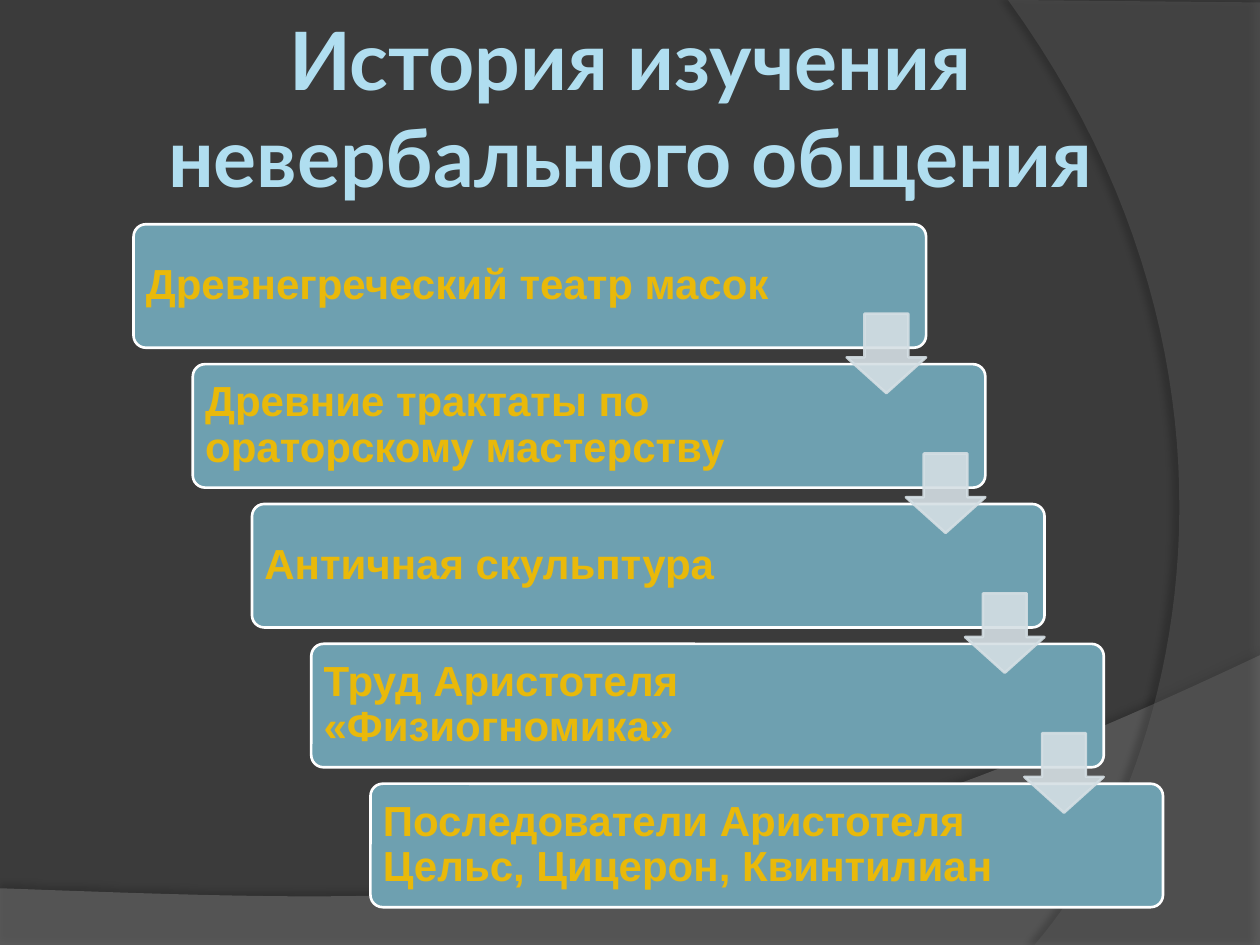
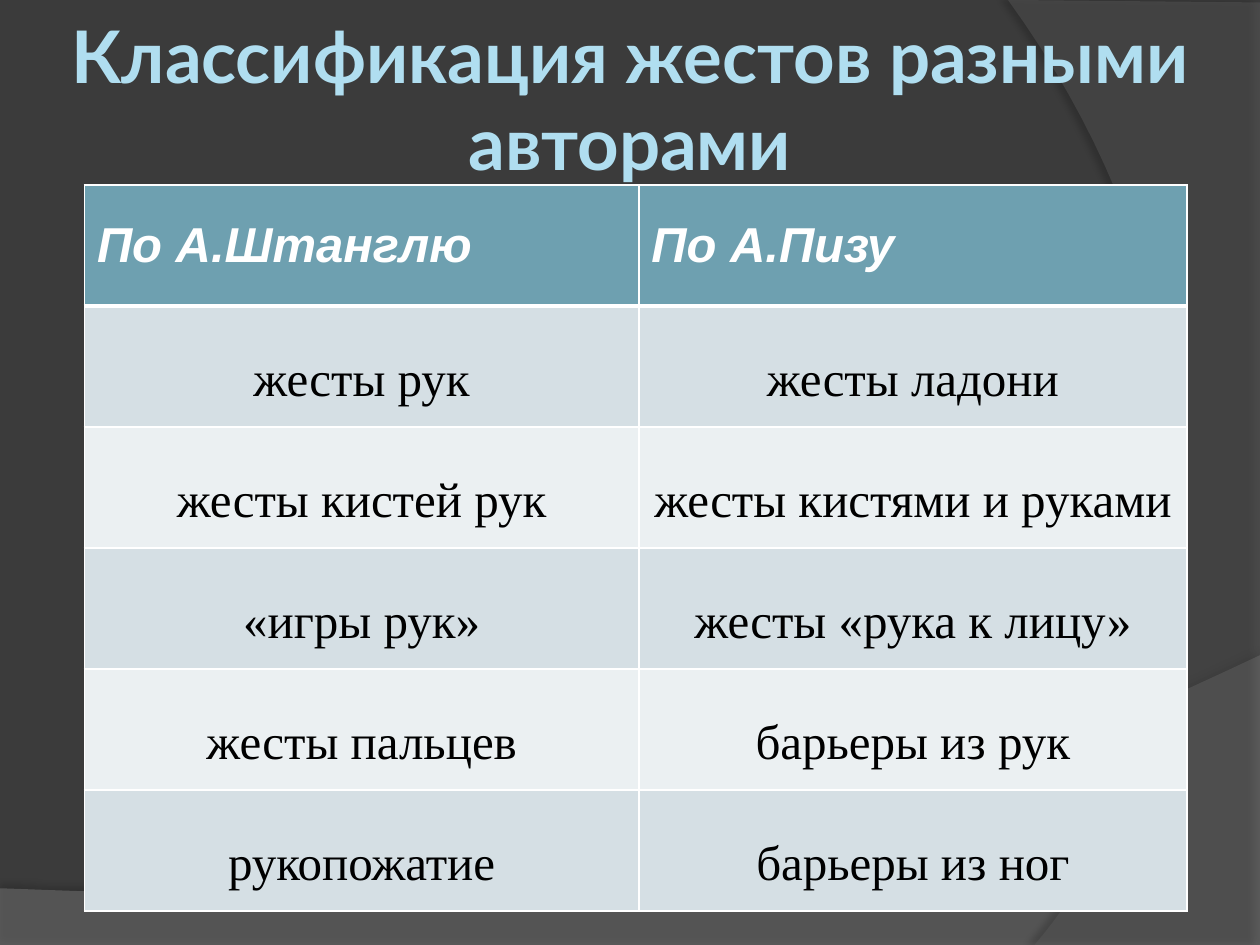
from dataclasses import dataclass

from lxml.etree import SubElement
from pptx import Presentation
from pptx.dml.color import RGBColor
from pptx.enum.shapes import MSO_SHAPE as Preset
from pptx.enum.text import MSO_ANCHOR as Anchor, PP_ALIGN as Align
from pptx.oxml.ns import qn
from pptx.util import Inches, Pt


@dataclass(frozen=True)
class Theme:
    backdrop: str = "3B3B3B"
    lower_wave: str = "7F7F7F"
    side_arc: str = "5E5E5E"
    shade: str = "000000"
    title: str = "B0DEF0"
    accent: str = "6EA0B0"
    step_text: str = "E9B90A"
    white: str = "FFFFFF"
    pale: str = "D5DFE4"
    paler: str = "EBF0F2"
    ink: str = "000000"
    title_font: str = "Lato"
    body_font: str = "Arial"
    cell_font: str = "Times New Roman"
    step_size: float = 24
    cell_size: float = 28


def curve(p0, p1, p2, p3, pieces=48):
    """Points of a cubic curve, without its starting point."""
    points = []
    for i in range(1, pieces + 1):
        t = i / pieces
        u = 1 - t
        weights = (u**3, 3 * u * u * t, 3 * u * t * t, t**3)
        points.append(tuple(sum(w * p[axis] for w, p in zip(weights, (p0, p1, p2, p3)))
                            for axis in (0, 1)))
    return points


class Deck:
    def __init__(self, theme):
        self.theme = theme
        self.prs = Presentation()
        self.prs.slide_width, self.prs.slide_height = Inches(10), Inches(7.5)
        self.slide = None

    # Shared slide parts
    def new_slide(self, title, title_size, title_height):
        theme = self.theme
        self.slide = self.prs.slides.add_slide(self.prs.slide_layouts[6])
        backdrop = self.slide.background.fill
        backdrop.solid()
        backdrop.fore_color.rgb = RGBColor.from_string(theme.backdrop)

        wave = [(0, 7.05), (0, 7.51), (10, 7.51), (10, 5.2)]
        wave += curve((10, 5.2), (5.59, 7.29), (3.91, 7.19), (0, 7.05))
        self.outline(wave, theme.lower_wave, 45, shade_alpha=35, distance=3.5, angle=270)
        arc = [(10, 0.02), (10, 7.5), (8.21, 7.5)]
        arc += curve((8.21, 7.5), (9.35, 6.19), (10.18, 3), (8, 0))
        self.outline(arc, theme.side_arc, 40, shade_alpha=45, distance=4, angle=180)

        self.title(title, title_size, title_height)

    def outline(self, points, color, opacity, shade_alpha, distance, angle):
        corners = [(Inches(x), Inches(y)) for x, y in points]
        builder = self.slide.shapes.build_freeform(*corners[0])
        builder.add_line_segments(corners[1:], close=True)
        band = builder.convert_to_shape()
        self.paint(band, color, opacity=opacity)
        effects = band.element.spPr.find(qn("a:effectLst"))
        shadow = SubElement(effects, qn("a:outerShdw"), blurRad=str(Pt(4)),
                            dist=str(Pt(distance)), dir=str(angle * 60000),
                            algn="ctr", rotWithShape="0")
        shade = SubElement(shadow, qn("a:srgbClr"), val=self.theme.shade)
        SubElement(shade, qn("a:alpha"), val=str(shade_alpha * 1000))

    def title(self, words, size, height):
        box = self.slide.shapes.add_textbox(0, 0, Inches(10), Inches(height))
        frame = box.text_frame
        frame.word_wrap = True
        frame.vertical_anchor = Anchor.MIDDLE
        self.insets(frame, 0.05, 0.05, 0.05, 0.05)
        frame.paragraphs[0].alignment = Align.CENTER
        self.run(frame, words, self.theme.title_font, size, self.theme.title, bold=True)

    # Styling helpers
    def paint(self, shape, color, line=None, opacity=None):
        shape.shadow.inherit = False
        shape.fill.solid()
        shape.fill.fore_color.rgb = RGBColor.from_string(color)
        if line:
            shape.line.color.rgb = RGBColor.from_string(line)
            shape.line.width = Pt(1.5)
        else:
            shape.line.fill.background()
        if opacity:
            for tint in list(shape.element.spPr.iter(qn("a:srgbClr"))):
                SubElement(tint, qn("a:alpha"), val=str(opacity * 1000))

    def insets(self, holder, left, top, right, bottom):
        holder.margin_left, holder.margin_top = Inches(left), Inches(top)
        holder.margin_right, holder.margin_bottom = Inches(right), Inches(bottom)

    def run(self, frame, words, font, size, color, bold=False, italic=False):
        run = frame.paragraphs[0].add_run()
        run.text = words
        run.font.name, run.font.size = font, Pt(size)
        run.font.bold, run.font.italic = bold, italic
        run.font.color.rgb = RGBColor.from_string(color)

    # Staircase parts
    def step(self, left, top, words):
        theme = self.theme
        card = self.slide.shapes.add_shape(Preset.ROUNDED_RECTANGLE, Inches(left), Inches(top),
                                           Inches(6.29), Inches(0.98))
        card.adjustments[0] = 0.1
        self.paint(card, theme.accent, line=theme.white)
        frame = card.text_frame
        frame.word_wrap = True
        frame.vertical_anchor = Anchor.MIDDLE
        self.insets(frame, 0.07, 0.07, 1.18, 0.07)
        frame.paragraphs[0].alignment = Align.LEFT
        frame.paragraphs[0].line_spacing = 0.9
        self.run(frame, words, theme.body_font, theme.step_size, theme.step_text, bold=True)

    def down_arrow(self, left, top):
        arrow = self.slide.shapes.add_shape(Preset.DOWN_ARROW, Inches(left), Inches(top),
                                            Inches(0.63), Inches(0.63))
        arrow.adjustments[0], arrow.adjustments[1] = 0.55, 0.45
        self.paint(arrow, self.theme.pale, line=self.theme.pale, opacity=90)

    # Table parts
    def table(self, left, top, widths, row_height, rows):
        grid = self.slide.shapes.add_table(len(rows), len(widths), Inches(left), Inches(top),
                                           Inches(sum(widths)),
                                           Inches(row_height * len(rows))).table
        grid.horz_banding = False
        for column, width in zip(grid.columns, widths):
            column.width = Inches(width)
        for r, words_in_row in enumerate(rows):
            grid.rows[r].height = Inches(row_height)
            for c, words in enumerate(words_in_row):
                self.cell(grid.cell(r, c), r, words)

    def cell(self, cell, row, words):
        theme = self.theme
        self.borders(cell, top=3 if row == 1 else 1, bottom=3 if row == 0 else 1)
        cell.vertical_anchor = Anchor.MIDDLE
        cell.fill.solid()
        frame = cell.text_frame
        if row == 0:
            color = theme.accent
            self.run(frame, words, theme.body_font, theme.cell_size, theme.white,
                     bold=True, italic=True)
        else:
            color = theme.pale if row % 2 else theme.paler
            self.insets(cell, 0.07, 0, 0.07, 0)
            frame.paragraphs[0].alignment = Align.CENTER
            frame.paragraphs[0].line_spacing = 1.5
            self.run(frame, words, theme.cell_font, theme.cell_size, theme.ink)
        cell.fill.fore_color.rgb = RGBColor.from_string(color)

    def borders(self, cell, top, bottom):
        properties = cell._tc.get_or_add_tcPr()
        for side, width in (("L", 1), ("R", 1), ("T", top), ("B", bottom)):
            edge = SubElement(properties, qn(f"a:ln{side}"), w=str(Pt(width)))
            fill = SubElement(edge, qn("a:solidFill"))
            SubElement(fill, qn("a:srgbClr"), val=self.theme.white)


def main():
    deck = Deck(Theme())

    # Slide 1: history as a staircase
    deck.new_slide("История изучения невербального общения", 46, 1.7)
    stages = [
        "Древнегреческий театр масок",
        "Древние трактаты по ораторскому мастерству",
        "Античная скульптура",
        "Труд Аристотеля «Физиогномика»",
        "Последователи Аристотеля Цельс, Цицерон, Квинтилиан",
    ]
    shift, drop = 0.47, 1.11
    for i, stage in enumerate(stages):
        deck.step(1.06 + shift * i, 1.78 + drop * i, stage)
    for i in range(len(stages) - 1):
        deck.down_arrow(6.72 + shift * i, 2.49 + drop * i)

    # Slide 2: two classifications of gestures
    deck.new_slide("Классификация жестов разными авторами", 41.4, 1.55)
    gestures = [
        ("По А.Штанглю", "По А.Пизу"),
        ("жесты рук", "жесты ладони"),
        ("жесты кистей рук", "жесты кистями и руками"),
        ("«игры рук»", "жесты «рука к лицу»"),
        ("жесты пальцев", "барьеры из рук"),
        ("рукопожатие", "барьеры из ног"),
    ]
    deck.table(0.67, 1.47, (4.4, 4.35), 0.96, gestures)

    deck.prs.save("out.pptx")


if __name__ == "__main__":
    main()
